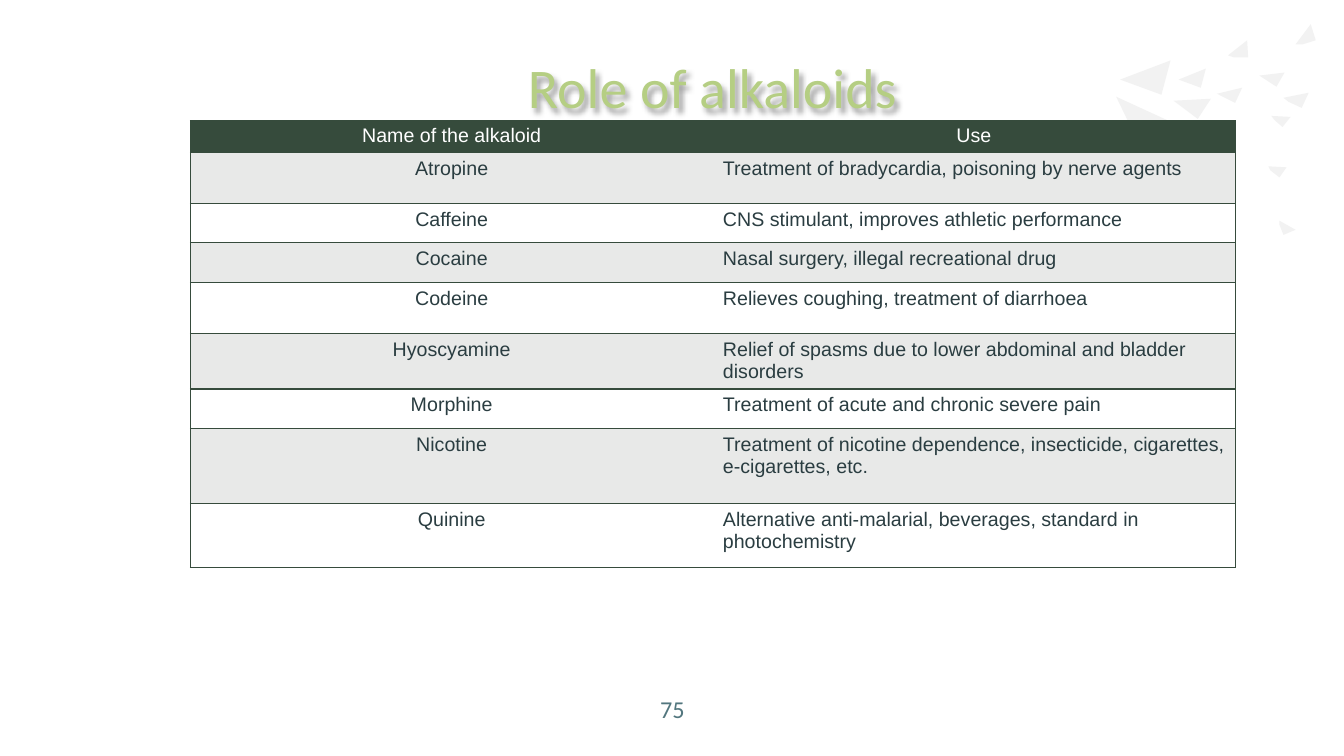
from lxml import etree
from pptx import Presentation, util as u
from pptx.dml.color import RGBColor
from pptx.enum import text
from pptx.oxml import parse_xml
from pptx.oxml.ns import nsdecls, qn

PX = 9144
GREEN, GREY, WHITE, INK = "364B3C", "E8E9E8", "FFFFFF", "2A3D41"
MID, LEFT = text.PP_ALIGN.CENTER, text.PP_ALIGN.LEFT

SHARDS = [
    [(1161, 60), (1152, 94), (1111, 79)],
    [(1201, 98), (1188, 118), (1164, 100)],
    [(1196, 68), (1191, 87), (1169, 79)],
    [(1232, 87), (1225, 102), (1207, 93)],
    [(1237, 40), (1238, 57), (1224, 57), (1218, 55)],
    [(1280, 116), (1272, 126), (1264, 119), (1261, 115)],
    [(1300, 24), (1305, 40), (1292, 44), (1285, 44)],
    [(1274, 72), (1266, 86), (1249, 75)],
    [(1298, 92), (1291, 107), (1278, 101), (1273, 97)],
    [(1168, 124), (1141, 166), (1107, 96)],
    [(1224, 143), (1204, 157), (1189, 132)],
    [(1276, 166), (1269, 176), (1260, 169), (1258, 165)],
    [(1160, 194), (1137, 201), (1131, 171)],
    [(1285, 228), (1273, 233), (1269, 223), (1269, 219)],
]

ROWS = [
    (31, "Name of the alkaloid", "Use"),
    (51, "Atropine", "Treatment of bradycardia, poisoning by nerve agents"),
    (39, "Caffeine", "CNS stimulant, improves athletic performance"),
    (39, "Cocaine", "Nasal surgery, illegal recreational drug"),
    (51, "Codeine", "Relieves coughing, treatment of diarrhoea"),
    (55, "Hyoscyamine", "Relief of spasms due to lower abdominal and bladder disorders"),
    (39, "Morphine", "Treatment of acute and chronic severe pain"),
    (75, "Nicotine", "Treatment of nicotine dependence, insecticide, cigarettes, e-cigarettes, etc."),
    (63, "Quinine", "Alternative anti-malarial, beverages, standard in photochemistry"),
]


def px(n):
    return u.Emu(n * PX)


def rgb(code):
    return RGBColor.from_string(code)


class Deck:
    def __init__(self, wide, high):
        self.pres = Presentation()
        self.pres.slide_width, self.pres.slide_height = wide, high
        self.slide = self.pres.slides.add_slide(self.pres.slide_layouts[5])
        self.shapes = self.slide.shapes

    def put(self, frame, words, size, color, font, align=MID):
        para = frame.paragraphs[0]
        para.alignment = align
        run = para.add_run()
        run.text = words
        run.font.size = u.Pt(size)
        run.font.name = font
        run.font.color.rgb = rgb(color)
        return para

    def place(self, shape, box, anchor):
        shape.left, shape.top, shape.width, shape.height = map(px, box)
        frame = shape.text_frame
        frame.word_wrap = True
        frame.auto_size = text.MSO_AUTO_SIZE.NONE
        frame.vertical_anchor = anchor
        frame.margin_left = frame.margin_right = 0
        frame.margin_top = frame.margin_bottom = 0
        return frame

    def title(self, box, words):
        shape = self.shapes.title
        frame = self.place(shape, box, text.MSO_ANCHOR.BOTTOM)
        self.put(frame, words, 40, "B5CE83", "Calibri").line_spacing = 0.9
        shape._element.spPr.append(parse_xml(
            f'<a:effectLst {nsdecls("a")}><a:outerShdw blurRad="50800" '
            'dist="38100" dir="2700000" algn="tl"><a:srgbClr val="000000">'
            '<a:alpha val="40000"/></a:srgbClr></a:outerShdw></a:effectLst>'))

    def label(self, box, words):
        shape = self.shapes.add_textbox(*map(px, box))
        frame = self.place(shape, box, text.MSO_ANCHOR.MIDDLE)
        self.put(frame, words, 17.3, "52767E", "Calibri")

    def shard(self, points):
        pen = self.shapes.build_freeform(*points[0], scale=PX)
        pen.add_line_segments(points[1:], close=True)
        shape = pen.convert_to_shape()
        shape.shadow.inherit = False
        shape.fill.solid()
        shape.fill.fore_color.rgb = rgb("F2F2F2")
        shape.line.fill.background()

    def border(self, cell, sides):
        props = cell._tc.get_or_add_tcPr()
        for side in "LRTB":
            line = etree.SubElement(props, qn("a:ln" + side), w=str(u.Pt(1)))
            if side in sides:
                fill = etree.SubElement(line, qn("a:solidFill"))
                etree.SubElement(fill, qn("a:srgbClr"), val=GREEN)
            else:
                etree.SubElement(line, qn("a:noFill"))

    def table(self, left, top, wide, rows):
        high = sum(row[0] for row in rows)
        grid = self.shapes.add_table(
            len(rows), 2, px(left), px(top), px(wide), px(high)).table
        for i, (tall, *words) in enumerate(rows):
            grid.rows[i].height = px(tall)
            back = GREEN if i == 0 else (WHITE, GREY)[i % 2]
            for j, word in enumerate(words):
                cell = grid.cell(i, j)
                cell.margin_top = cell.margin_bottom = px(5 if i else 4)
                cell.margin_left = cell.margin_right = px(10)
                self.border(cell, ("LTB", "RTB")[j])
                cell.fill.solid()
                cell.fill.fore_color.rgb = rgb(back)
                para = self.put(cell.text_frame, word, 14, INK if i else WHITE,
                                "Arial", LEFT if i and j else MID)
                para.runs[0].font.bold = False


def main():
    deck = Deck(u.Inches(13.33), u.Inches(7.5))
    for points in SHARDS:
        deck.shard(points)
    deck.table(189, 120, 1036, ROWS)
    deck.title((148, 0, 1117, 120), "Role of alkaloids")
    deck.label((627, 656, 80, 94), "75")
    deck.pres.save("out.pptx")


if __name__ == "__main__":
    main()
